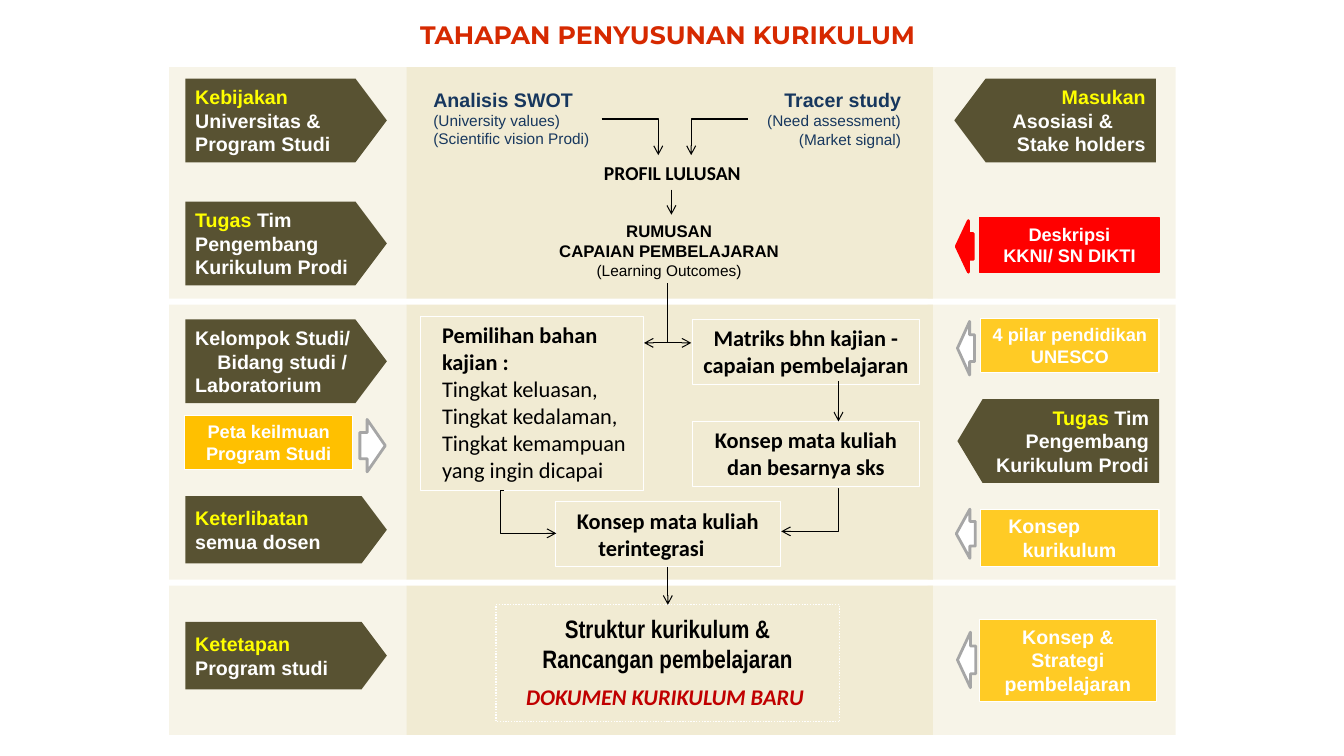
from pptx import Presentation
from pptx import util as u
from pptx.dml.color import RGBColor
from pptx.enum import dml, shapes, text
from pptx.oxml import ns
from lxml import etree

COLOURS = {
    "band": "F1EBD3", "olive": "585232", "white": "FFFFFF", "black": "000000",
    "yellow": "FFFF00", "gold": "FFCB25", "amber": "FFC000", "red": "FF0000",
    "grey": "A6A6A6", "navy": "17375E", "title": "D62900", "crimson": "C00000",
}
ALIGN = {"l": text.PP_ALIGN.LEFT, "c": text.PP_ALIGN.CENTER, "r": text.PP_ALIGN.RIGHT}
KIND = shapes.MSO_SHAPE


def rgb(name):
    return RGBColor.from_string(COLOURS[name])


class Board:
    """Draws the elements of the curriculum flow on one slide, in centimetres."""

    def __init__(self, slide):
        self.slide = slide

    def shape(self, kind, at, fill=None, line=None, width=0.75, adjust=(), alpha=None):
        part = self.slide.shapes.add_shape(kind, *map(u.Cm, at))
        part.shadow.inherit = False
        for index, value in enumerate(adjust):
            part.adjustments[index] = value
        if fill:
            part.fill.solid()
            part.fill.fore_color.rgb = rgb(fill)
        else:
            part.fill.background()
        if alpha:
            tint = part._element.spPr.find(".//" + ns.qn("a:srgbClr"))
            etree.SubElement(tint, ns.qn("a:alpha")).set("val", str(alpha * 1000))
        if line:
            part.line.color.rgb = rgb(line)
            part.line.width = u.Pt(width)
        else:
            part.line.fill.background()
        return part

    def words(self, part, lines, size, font="Arial", colour="white", align="c", lead="",
              indents=None, plain=None, plain_size=None, italic=False, middle=False):
        frame = part.text_frame
        frame.word_wrap = True
        frame.vertical_anchor = text.MSO_ANCHOR.MIDDLE if middle else text.MSO_ANCHOR.TOP
        frame.text = "\n".join(lines)
        for row, paragraph in enumerate(frame.paragraphs):
            paragraph.alignment = ALIGN[align]
            if row in (indents or {}):
                paragraph.alignment = ALIGN["l"]
                paragraph._p.get_or_add_pPr().set("marL", str(int(u.Cm(indents[row]))))
            if lead and row == 0:
                rest = paragraph.text[len(lead):]
                paragraph.text = lead
                if rest:
                    paragraph.add_run().text = rest
            regular = plain is not None and row >= plain
            for place, run in enumerate(paragraph.runs):
                run.font.name = font
                run.font.size = u.Pt(plain_size if regular and plain_size else size)
                run.font.bold = not regular
                run.font.italic = italic
                first = lead and row == 0 and place == 0
                run.font.color.rgb = rgb("yellow" if first else colour)

    def label(self, at, lines, size, **style):
        self.words(self.slide.shapes.add_textbox(*map(u.Cm, at)), lines, size, **style)

    def plate(self, left, top, height, lines, notch=0.375, flipped=False, **style):
        part = self.shape(KIND.PENTAGON, (left, top, 5.08, height), "olive", adjust=[notch])
        if flipped:
            part._element.spPr.get_or_add_xfrm().set("flipH", "1")
        self.words(part, lines, 14, align="r" if flipped else "l", middle=True, **style)

    def tag(self, at, arrow_at, lines, size, fill="gold", arrow=KIND.LEFT_ARROW,
            line="white", arrow_fill="white", arrow_line="grey", **style):
        self.words(self.shape(KIND.RECTANGLE, at, fill, line), lines, size, **style)
        self.shape(arrow, arrow_at, arrow_fill, arrow_line, 2, (0.5, 0.713))

    def box(self, at, lines, **style):
        part = self.shape(KIND.RECTANGLE, at, line="white")
        self.words(part, lines, 16, font="Calibri", colour="black", **style)
        return part

    def flow(self, start, end, bend=None, ends=("tailEnd",)):
        kind = shapes.MSO_CONNECTOR.STRAIGHT if bend is None else shapes.MSO_CONNECTOR.ELBOW
        link = self.slide.shapes.add_connector(kind, *map(u.Cm, start + end))
        link.line.color.rgb = rgb("black")
        link.line.width = u.Pt(0.75)
        properties = link._element.spPr
        outline = properties.find(ns.qn("a:ln"))
        for end_name in ends:
            etree.SubElement(outline, ns.qn("a:" + end_name)).set("type", "arrow")
        etree.SubElement(properties, ns.qn("a:effectLst"))
        if bend is not None:
            guides = properties.find(".//" + ns.qn("a:avLst"))
            guide = etree.SubElement(guides, ns.qn("a:gd"))
            guide.set("name", "adj1")
            guide.set("fmla", f"val {round(bend * 100000)}")
        return link


def main():
    deck = Presentation()
    deck.slide_width, deck.slide_height = u.Cm(33.87), u.Cm(19.05)
    board = Board(deck.slides.add_slide(deck.slide_layouts[6]))

    for top, height in ((1.69, 5.84), (7.68, 6.93), (14.76, 3.76)):
        for left, width, alpha in ((4.26, 6, 50), (23.38, 6.25, 50), (10.25, 13.26, None)):
            board.shape(KIND.RECTANGLE, (left, top, width, height), "band", alpha=alpha)

    board.label((9.42, 0.36, 14.81, 1.02), ["TAHAPAN PENYUSUNAN KURIKULUM"], 18,
                font="Montserrat", colour="title")

    for top, height, lines, lead, indents in (
        (1.98, 2.11, ["Kebijakan Universitas & Program Studi"], "Kebijakan", None),
        (5.08, 2.11, ["Tugas Tim", "Pengembang Kurikulum Prodi"], "Tugas", None),
        (8.05, 2.11, ["Kelompok Studi/", "Bidang studi /", "Laboratorium"], "", {1: 0.56}),
        (12.5, 1.7, ["Keterlibatan semua dosen"], "Keterlibatan", None),
        (15.67, 1.7, ["Ketetapan Program studi"], "Ketetapan", None),
    ):
        board.plate(4.67, top, height, lines, lead=lead, indents=indents)
    board.plate(24.05, 1.98, 2.11, ["Masukan", "Asosiasi &", "Stake holders"],
                flipped=True, lead="Masukan", indents={1: 0.83})
    board.plate(24.13, 10.06, 2.11, ["Tugas Tim", "Pengembang Kurikulum Prodi"],
                notch=0.3, flipped=True, lead="Tugas")

    board.tag((4.65, 10.46, 4.24, 1.37), (9.07, 10.57, 0.64, 1.32),
              ["Peta keilmuan Program Studi"], 13, fill="amber", arrow=KIND.RIGHT_ARROW)
    board.tag((24.69, 5.49, 4.52, 1.37), (24.1, 5.56, 0.43, 1.3),
              ["Deskripsi", "KKNI/ SN DIKTI"], 13, fill="red", line="red",
              arrow_fill="red", arrow_line="red")
    board.tag((24.71, 8.03, 4.5, 1.37), (24.13, 8.1, 0.43, 1.35),
              ["4 pilar pendidikan UNESCO"], 13)
    board.tag((24.71, 12.83, 4.5, 1.45), (24.1, 12.83, 0.48, 1.24),
              ["Konsep", "kurikulum"], 14, indents={0: 0.45, 1: 0.81})
    board.tag((24.69, 15.62, 4.45, 2.06), (24.13, 15.93, 0.46, 1.4),
              ["Konsep & Strategi pembelajaran"], 14)

    board.label((10.67, 2.08, 4.45, 1.8),
                ["Analisis SWOT", "(University values)", "(Scientific vision Prodi)"], 14,
                colour="navy", align="l", plain=1, plain_size=11)
    board.label((18.87, 2.08, 4.09, 1.8),
                ["Tracer study", "(Need assessment)", "(Market signal)"], 14,
                colour="navy", align="r", plain=1, plain_size=11, middle=True)
    board.label((14.94, 3.94, 4.01, 0.86), ["PROFIL LULUSAN"], 14,
                font="Calibri", colour="black")
    board.label((13.59, 5.44, 6.55, 1.75),
                ["RUMUSAN", "CAPAIAN PEMBELAJARAN", "(Learning Outcomes)"], 12,
                colour="black", plain=2, plain_size=11)

    board.box((10.59, 7.98, 5.64, 4.37),
              ["Pemilihan bahan kajian :", "Tingkat keluasan,", "Tingkat kedalaman,",
               "Tingkat kemampuan yang ingin dicapai"],
              indents=dict.fromkeys(range(4), 0.3), plain=1)
    board.box((17.45, 8.05, 5.72, 1.63), ["Matriks bhn kajian -", "capaian pembelajaran"])
    board.box((17.45, 10.62, 5.72, 1.63), ["Konsep mata kuliah dan besarnya sks"])
    integrated = board.box((14, 12.65, 5.66, 1.63), ["Konsep mata kuliah", "terintegrasi"],
                           indents={1: 0.83})
    document = board.shape(KIND.RECTANGLE, (12.5, 15.24, 8.66, 2.95), line="white", width=1)
    document.line.dash_style = dml.MSO_LINE.ROUND_DOT
    board.label((13.23, 15.32, 7.19, 1.8), ["Struktur kurikulum &", "Rancangan pembelajaran"],
                18, font="Arial Narrow", colour="black")
    board.label((12.52, 17.09, 8.48, 0.91), ["DOKUMEN KURIKULUM BARU"], 16,
                font="Calibri", colour="crimson", italic=True)

    board.flow((15.16, 3), (16.59, 3.91), bend=1)
    board.flow((18.85, 3), (17.42, 3.91), bend=1)
    board.flow((16.92, 4.78), (16.92, 5.41))
    board.flow((16.81, 7.14), (16.81, 8.64), ends=())
    board.flow((16.23, 8.64), (17.42, 8.64), ends=("headEnd", "tailEnd"))
    board.flow((21.13, 9.6), (21.13, 10.62))
    board.flow((12.7, 12.37), (14.02, 13.44), bend=-0.06)
    board.flow((21.11, 12.32), (19.69, 13.39), bend=-0.02)
    publishing = board.flow((16.83, 14.28), (16.83, 15.24))
    publishing.begin_connect(integrated, 2)
    publishing.end_connect(document, 0)

    deck.save("out.pptx")


if __name__ == "__main__":
    main()
